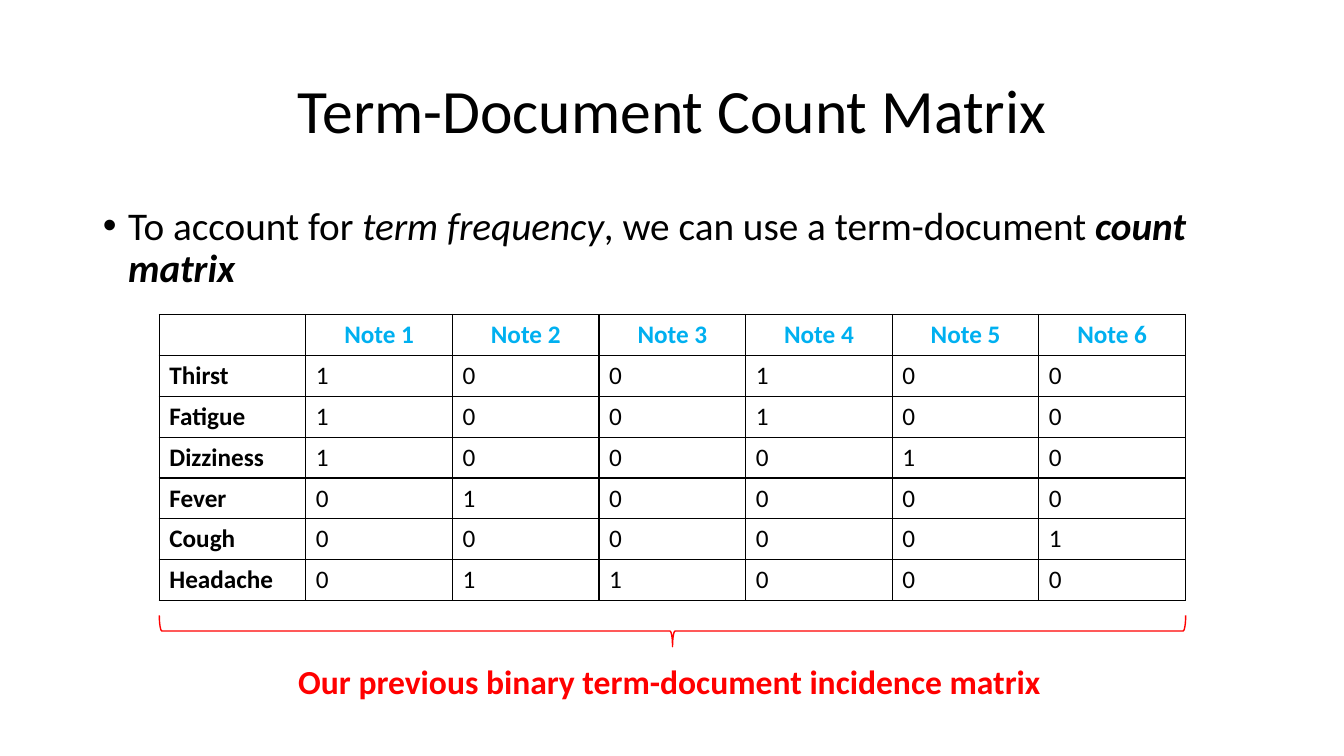
from lxml.etree import SubElement
from pptx import Presentation
from pptx.dml.color import RGBColor
from pptx.enum.shapes import MSO_SHAPE
from pptx.enum.text import MSO_ANCHOR, MSO_AUTO_SIZE, PP_ALIGN
from pptx.oxml import parse_xml
from pptx.oxml.ns import nsdecls, qn
from pptx.util import Inches, Pt

BLACK, RED, BLUE = "000000", "FF0000", "00B0F0"


def rgb(color):
    return RGBColor.from_string(color)


def add_text(p, text, size=18, color=BLACK, bold=False, italic=False, align=PP_ALIGN.LEFT):
    p.alignment = align
    r = p.add_run()
    r.text = text
    r.font.name = "Calibri"
    r.font.size = Pt(size)
    r.font.color.rgb = rgb(color)
    r.font.bold = bold
    r.font.italic = italic


prs = Presentation()
prs.slide_width, prs.slide_height = Inches(13.33), Inches(7.5)
s = prs.slides.add_slide(prs.slide_layouts[1])
title, body = s.placeholders

# Title
title.left, title.top, title.width, title.height = map(Inches, (0.92, 0.4, 11.5, 1.45))
tf = title.text_frame
tf.auto_size = MSO_AUTO_SIZE.NONE
tf.vertical_anchor = MSO_ANCHOR.MIDDLE
p = tf.paragraphs[0]
p.line_spacing = 0.9
add_text(p, "Term-Document Count Matrix", size=44, align=PP_ALIGN.CENTER)

# Bullet
body.left, body.top, body.width, body.height = map(Inches, (0.92, 2, 11.72, 5.1))
tf = body.text_frame
tf.auto_size = MSO_AUTO_SIZE.NONE
p = tf.paragraphs[0]
p.line_spacing = 0.9
p.space_before = Pt(10)
add_text(p, "To account for ", size=28)
add_text(p, "term frequency", size=28, italic=True)
add_text(p, ", we can use a term-document ", size=28)
add_text(p, "count matrix", size=28, bold=True, italic=True)
pPr = p._p.get_or_add_pPr()
pPr.set("marL", str(Inches(0.25)))
pPr.set("indent", str(Inches(-0.25)))
SubElement(pPr, qn("a:buFont")).set("typeface", "Arial")
SubElement(pPr, qn("a:buChar")).set("char", "•")

# Count matrix
counts = {
    "Thirst": (1, 0, 0, 1, 0, 0),
    "Fatigue": (1, 0, 0, 1, 0, 0),
    "Dizziness": (1, 0, 0, 0, 1, 0),
    "Fever": (0, 1, 0, 0, 0, 0),
    "Cough": (0, 0, 0, 0, 0, 1),
    "Headache": (0, 1, 1, 0, 0, 0),
}
rows = [["", *(f"Note {n}" for n in range(1, 7))]]
rows += [[term, *map(str, values)] for term, values in counts.items()]
left, top, width, height = map(Inches, (1.58, 3.12, 10.18, 2.84))
table = s.shapes.add_table(len(rows), len(rows[0]), left, top, width, height).table
table.horz_banding = False
for i, row in enumerate(rows):
    for j, text in enumerate(row):
        cell = table.cell(i, j)
        if text:
            add_text(cell.text_frame.paragraphs[0], text, bold=i == 0 or j == 0,
                     color=BLACK if i else BLUE,
                     align=PP_ALIGN.LEFT if i else PP_ALIGN.CENTER)
        tcPr = cell._tc.get_or_add_tcPr()
        for side in ("lnL", "lnR", "lnT", "lnB"):
            tcPr.append(parse_xml(
                f'<a:{side} {nsdecls("a")} w="{Pt(1)}"><a:solidFill>'
                f'<a:srgbClr val="{BLACK}"/></a:solidFill></a:{side}>'))
        cell.fill.background()

# Caption
sp = s.shapes.add_textbox(*map(Inches, (2.86, 6.51, 7.84, 0.5)))
tf = sp.text_frame
tf.word_wrap = False
tf.auto_size = MSO_AUTO_SIZE.SHAPE_TO_FIT_TEXT
add_text(tf.paragraphs[0], "Our previous binary term-document incidence matrix",
         size=24, color=RED, bold=True)

# Brace under the matrix, turned to point down at the caption
depth = Inches(0.31)
brace = s.shapes.add_shape(MSO_SHAPE.RIGHT_BRACE, left + (width - depth) // 2,
                           Inches(6.26) - width // 2, depth, width)
brace.rotation = 90
brace.shadow.inherit = False
brace.fill.background()
brace.line.color.rgb = rgb(RED)
brace.line.width = Pt(1)

prs.save("out.pptx")
